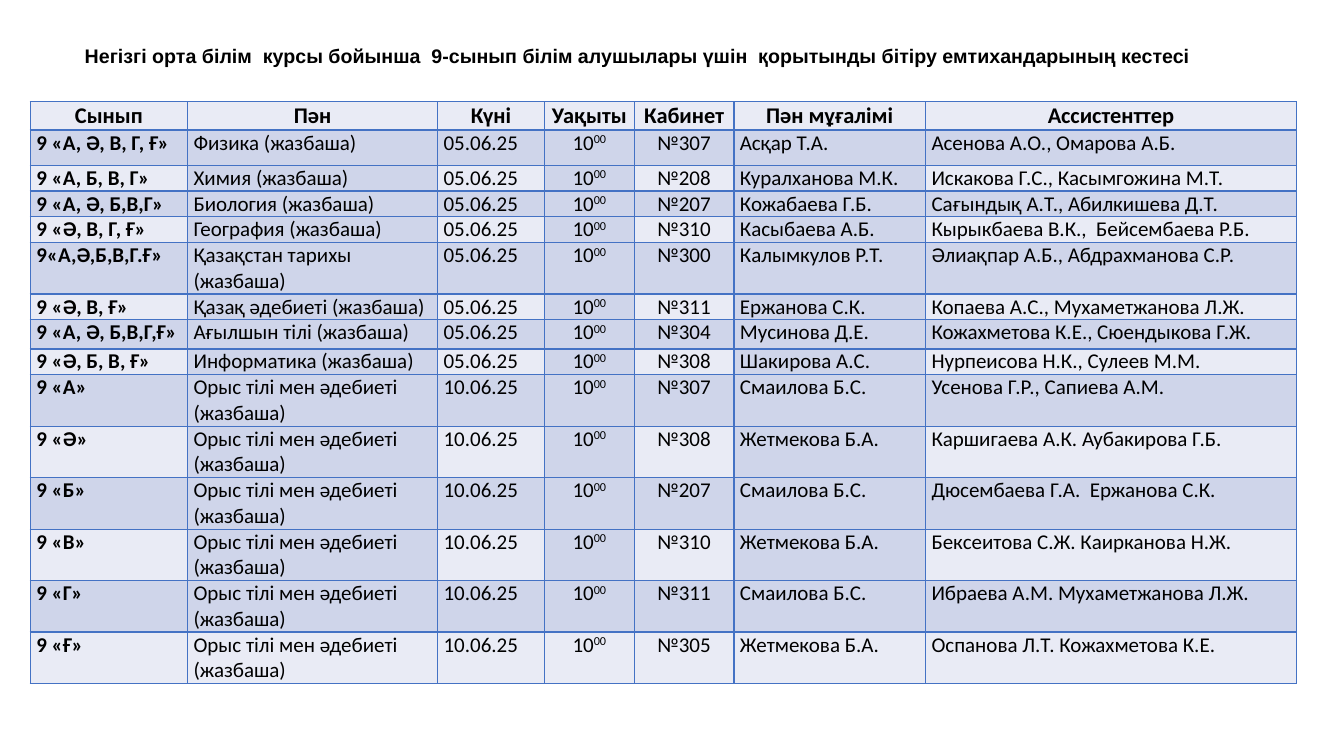
from lxml import etree
from pptx import Presentation
from pptx.dml.color import RGBColor
from pptx.enum.text import MSO_ANCHOR, MSO_AUTO_SIZE, PP_ALIGN
from pptx.oxml.ns import qn
from pptx.util import Inches, Pt

BLACK = RGBColor(0x00, 0x00, 0x00)
BORDER = RGBColor(0x44, 0x72, 0xC4)
LIGHT = RGBColor(0xE9, 0xEB, 0xF5)
DARK = RGBColor(0xCF, 0xD5, 0xEA)

TITLE = ("Негізгі орта білім  курсы бойынша  9-сынып білім алушылары үшін  "
         "қорытынды бітіру емтихандарының кестесі")
HEADERS = ("Сынып", "Пән", "Күні", "Уақыты", "Кабинет", "Пән мұғалімі", "Ассистенттер")
COLUMN_WIDTHS = (1.56, 2.48, 1.06, 0.89, 0.99, 1.9, 3.68)
CLASS, TIME, ROOM = 0, 3, 4
BANDED_COLUMNS = (1, 3, 5)

FIRST_DAY, SECOND_DAY = "05.06.25", "10.06.25"
HOUR, MINUTES = "10", "00"
RUSSIAN = "Орыс тілі мен әдебиеті"

# Class, subject, date, room, teacher, assistants, row height
EXAMS = (
    ("9 «А, Ә, В, Г, Ғ»", "Физика", FIRST_DAY, "№307", "Асқар Т.А.",
     "Асенова А.О., Омарова А.Б.", 0.35),
    ("9 «А, Б, В, Г»", "Химия", FIRST_DAY, "№208", "Куралханова М.К.",
     "Искакова Г.С., Касымгожина М.Т.", 0.25),
    ("9 «А, Ә, Б,В,Г»", "Биология", FIRST_DAY, "№207", "Кожабаева Г.Б.",
     "Сағындық А.Т., Абилкишева Д.Т.", 0.25),
    ("9 «Ә, В, Г, Ғ»", "География", FIRST_DAY, "№310", "Касыбаева А.Б.",
     "Кырыкбаева В.К.,  Бейсембаева Р.Б.", 0.25),
    ("9«А,Ә,Б,В,Г.Ғ»", "Қазақстан тарихы", FIRST_DAY, "№300", "Калымкулов Р.Т.",
     "Әлиақпар А.Б., Абдрахманова С.Р.", 0.51),
    ("9 «Ә, В, Ғ»", "Қазақ әдебиеті", FIRST_DAY, "№311", "Ержанова С.К.",
     "Копаева А.С., Мухаметжанова Л.Ж.", 0.25),
    ("9 «А, Ә, Б,В,Г,Ғ»", "Ағылшын тілі", FIRST_DAY, "№304", "Мусинова Д.Е.",
     "Кожахметова К.Е., Сюендыкова Г.Ж.", 0.29),
    ("9 «Ә, Б, В, Ғ»", "Информатика", FIRST_DAY, "№308", "Шакирова А.С.",
     "Нурпеисова Н.К., Сулеев М.М.", 0.25),
    ("9 «А»", RUSSIAN, SECOND_DAY, "№307", "Смаилова Б.С.",
     "Усенова Г.Р., Сапиева А.М.", 0.51),
    ("9 «Ә»", RUSSIAN, SECOND_DAY, "№308", "Жетмекова Б.А.",
     "Каршигаева А.К. Аубакирова Г.Б.", 0.51),
    ("9 «Б»", RUSSIAN, SECOND_DAY, "№207", "Смаилова Б.С.",
     "Дюсембаева Г.А.  Ержанова С.К.", 0.51),
    ("9 «В»", RUSSIAN, SECOND_DAY, "№310", "Жетмекова Б.А.",
     "Бексеитова С.Ж. Каирканова Н.Ж.", 0.51),
    ("9 «Г»", RUSSIAN, SECOND_DAY, "№311", "Смаилова Б.С.",
     "Ибраева А.М. Мухаметжанова Л.Ж.", 0.51),
    ("9 «Ғ»", RUSSIAN, SECOND_DAY, "№305", "Жетмекова Б.А.",
     "Оспанова Л.Т. Кожахметова К.Е.", 0.51),
)
LAST_ROW = len(EXAMS)


def format_font(font, name, size, bold):
    font.name = name
    font.size = Pt(size)
    font.bold = bold
    font.color.rgb = BLACK


def add_title(slide):
    title = slide.shapes.title
    title.left, title.top = Inches(0.74), Inches(0.37)
    title.width, title.height = Inches(11.24), Inches(0.36)
    text_frame = title.text_frame
    text_frame.text = TITLE
    text_frame.word_wrap = False
    text_frame.auto_size = MSO_AUTO_SIZE.NONE
    text_frame.vertical_anchor = MSO_ANCHOR.MIDDLE
    paragraph = text_frame.paragraphs[0]
    paragraph.alignment = PP_ALIGN.LEFT
    paragraph.line_spacing = 1.0
    format_font(paragraph.runs[0].font, "Arial", 14, True)


def set_borders(cell, top, bottom):
    properties = cell._tc.get_or_add_tcPr()
    for side, width in (("L", 1), ("R", 1), ("T", top), ("B", bottom)):
        line = etree.SubElement(properties, qn(f"a:ln{side}"), w=str(Pt(width)))
        fill = etree.SubElement(line, qn("a:solidFill"))
        etree.SubElement(fill, qn("a:srgbClr"), val=str(BORDER))


def cell_color(row, column):
    if row in (0, LAST_ROW):
        return LIGHT
    return DARK if row % 2 or column in BANDED_COLUMNS else LIGHT


def fill_cell(cell, row, column, text):
    cell.margin_left = cell.margin_right = Inches(0.06)
    cell.margin_top = cell.margin_bottom = 0
    set_borders(cell, 2 if row == LAST_ROW else 1, 2 if row == LAST_ROW - 1 else 1)
    cell.fill.solid()
    cell.fill.fore_color.rgb = cell_color(row, column)

    is_header = row == 0
    paragraph = cell.text_frame.paragraphs[0]
    paragraph.text = text
    centered = is_header or column in (TIME, ROOM)
    paragraph.alignment = PP_ALIGN.CENTER if centered else PP_ALIGN.LEFT
    # Minutes stand as a superscript after the hour
    if column == TIME and not is_header:
        minutes = paragraph.add_run()
        minutes.text = MINUTES
        minutes._r.get_or_add_rPr().set("baseline", "30000")
    for run in paragraph.runs:
        format_font(run.font, "Calibri", 16 if is_header else 15,
                    is_header or column == CLASS)


def add_schedule(slide):
    rows, heights = [HEADERS], [0.28]
    for class_name, subject, date, room, teacher, assistants, height in EXAMS:
        rows.append((class_name, f"{subject} (жазбаша)", date, HOUR, room,
                     teacher, assistants))
        heights.append(height)

    frame = slide.shapes.add_table(
        len(rows), len(HEADERS), Inches(0.3), Inches(1.01),
        Inches(sum(COLUMN_WIDTHS)), Inches(sum(heights)))
    table = frame.table
    table.first_row = table.horz_banding = False
    for column, width in zip(table.columns, COLUMN_WIDTHS):
        column.width = Inches(width)
    for row_index, (texts, height) in enumerate(zip(rows, heights)):
        table.rows[row_index].height = Inches(height)
        for column_index, text in enumerate(texts):
            fill_cell(table.cell(row_index, column_index), row_index, column_index, text)


def main():
    presentation = Presentation()
    presentation.slide_width = Inches(13.33)
    presentation.slide_height = Inches(7.5)
    slide = presentation.slides.add_slide(presentation.slide_layouts[5])
    add_title(slide)
    add_schedule(slide)
    presentation.save("out.pptx")


if __name__ == "__main__":
    main()
